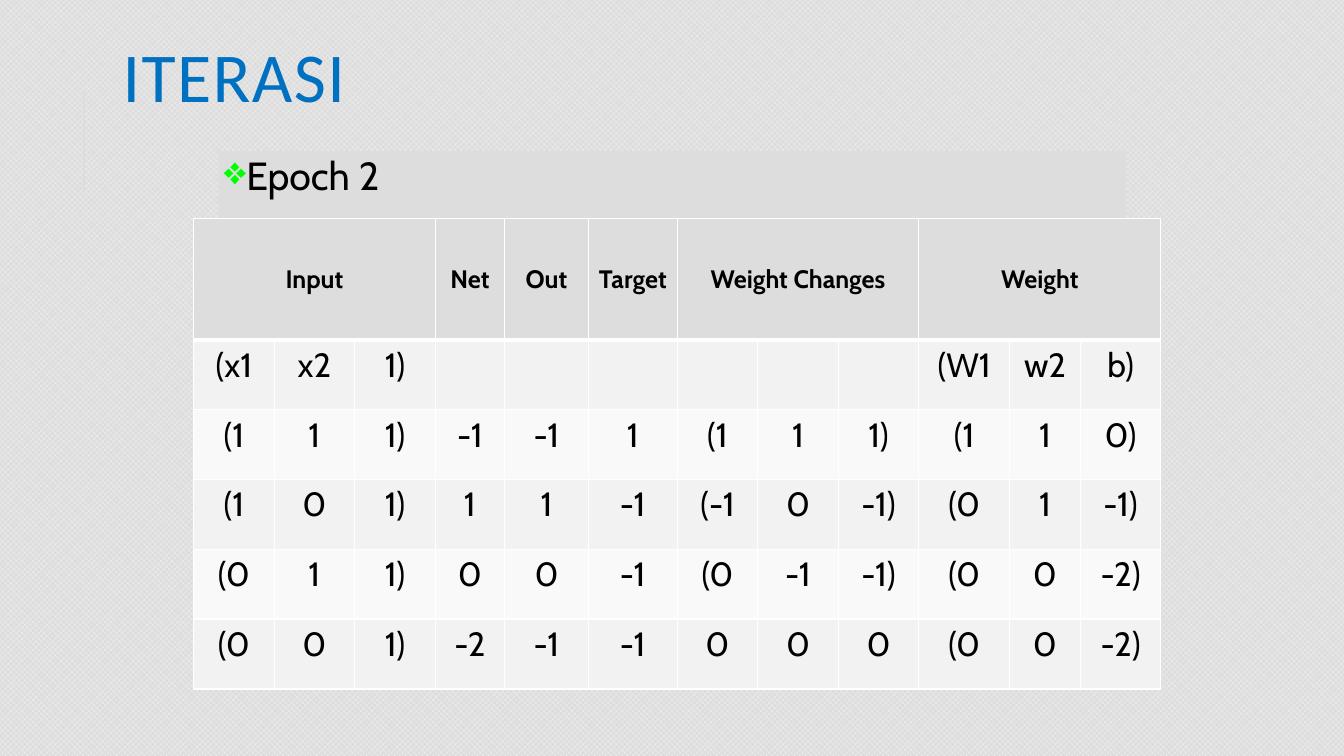
from dataclasses import dataclass

from lxml.etree import SubElement
from pptx import Presentation
from pptx.dml.color import RGBColor
from pptx.enum.dml import MSO_PATTERN
from pptx.enum.shapes import MSO_CONNECTOR, MSO_SHAPE
from pptx.enum.text import MSO_ANCHOR as Anchor, PP_ALIGN as Align
from pptx.oxml.ns import qn
from pptx.util import Cm, Pt


@dataclass(frozen=True)
class Theme:
    title_font: str = "Calibri"
    body_font: str = "Cabin"
    title_size: int = 50
    epoch_size: int = 28
    header_size: int = 18
    value_size: int = 24
    blue: str = "0070C0"
    green: str = "00FF00"
    black: str = "000000"
    white: str = "FFFFFF"
    gray: str = "DDDDDD"
    weave: str = "F8F8F8"
    bands: tuple = ("F2F2F2", "F9F9F9")


COLUMN_WIDTHS = [2.03] * 3 + [1.75, 2.11, 2.24] + [2.03] * 3 + [2.29, 1.78, 2.03]
HEADER_HEIGHT, VALUE_HEIGHT = 3.05, 1.76
# Heading and the number of columns it covers
HEADINGS = [("Input", 3), ("Net", 1), ("Out", 1), ("Target", 1),
            ("Weight Changes", 3), ("Weight", 3)]
ITERATIONS = [
    ["(x1", "x2", "1)", "", "", "", "", "", "", "(W1", "w2", "b)"],
    ["(1", "1", "1)", "-1", "-1", "1", "(1", "1", "1)", "(1", "1", "0)"],
    ["(1", "0", "1)", "1", "1", "-1", "(-1", "0", "-1)", "(0", "1", "-1)"],
    ["(0", "1", "1)", "0", "0", "-1", "(0", "-1", "-1)", "(0", "0", "-2)"],
    ["(0", "0", "1)", "-2", "-1", "-1", "0", "0", "0", "(0", "0", "-2)"],
]


def apply_format(target, values):
    for name, value in values.items():
        setattr(target, name, value)


def rgb(color):
    return RGBColor.from_string(color)


class SlideBuilder:
    def __init__(self, slide, theme):
        self.slide, self.theme = slide, theme

    def background(self):
        fill = self.slide.background.fill
        fill.patterned()
        fill.pattern = MSO_PATTERN.SOLID_DIAMOND
        fill.fore_color.rgb = rgb(self.theme.weave)
        fill.back_color.rgb = rgb(self.theme.gray)

    def add_text(self, paragraph, text, font, size, color, bold=False):
        run = paragraph.add_run()
        run.text = text
        apply_format(run.font, {"name": font, "size": Pt(size), "bold": bold})
        run.font.color.rgb = rgb(color)
        return run

    def rule(self, x, top, bottom):
        line = self.slide.shapes.add_connector(
            MSO_CONNECTOR.STRAIGHT, Cm(x), Cm(bottom), Cm(x), Cm(top))
        line.line.color.rgb = rgb(self.theme.gray)
        line.line.width = Pt(1.5)
        SubElement(line._element.spPr, qn("a:effectLst"))

    def title(self, text, *box):
        frame = self.slide.shapes.add_textbox(*map(Cm, box)).text_frame
        apply_format(frame, {"word_wrap": True, "vertical_anchor": Anchor.MIDDLE})
        paragraph = frame.paragraphs[0]
        paragraph.line_spacing = 0.8
        run = self.add_text(paragraph, text, self.theme.title_font,
                            self.theme.title_size, self.theme.blue)
        run._r.get_or_add_rPr().set("spc", "100")

    def bullet_panel(self, text, *box):
        panel = self.slide.shapes.add_shape(MSO_SHAPE.RECTANGLE, *map(Cm, box))
        panel.shadow.inherit = False
        panel.fill.solid()
        panel.fill.fore_color.rgb = rgb(self.theme.gray)
        panel.line.fill.background()
        frame = panel.text_frame
        apply_format(frame, {"word_wrap": True, "vertical_anchor": Anchor.TOP})
        apply_format(frame, {f"margin_{side}": Cm(0.13)
                             for side in ("left", "top", "right", "bottom")})
        paragraph = frame.paragraphs[0]
        properties = paragraph._p.get_or_add_pPr()
        properties.set("marL", str(Cm(0.25)))
        properties.set("indent", str(Cm(-0.25)))
        bullet_color = SubElement(properties, qn("a:buClr"))
        SubElement(bullet_color, qn("a:srgbClr"), val=self.theme.green)
        SubElement(properties, qn("a:buChar"), char="❖")
        apply_format(paragraph, {"alignment": Align.LEFT, "line_spacing": 0.9,
                                 "space_after": Pt(2)})
        self.add_text(paragraph, text, self.theme.body_font,
                      self.theme.epoch_size, self.theme.black)

    def borders(self, cell, bottom):
        properties = cell._tc.get_or_add_tcPr()
        for side, width in {"L": 1, "R": 1, "T": 1, "B": bottom}.items():
            edge = SubElement(properties, qn(f"a:ln{side}"), w=str(Pt(width)))
            fill = SubElement(edge, qn("a:solidFill"))
            SubElement(fill, qn("a:srgbClr"), val=self.theme.white)

    def cell(self, cell, text, size, fill, header=False):
        self.borders(cell, 3 if header else 1)
        cell.fill.solid()
        cell.fill.fore_color.rgb = rgb(fill)
        cell.vertical_anchor = Anchor.MIDDLE if header else Anchor.TOP
        paragraph = cell.text_frame.paragraphs[0]
        paragraph.alignment = Align.CENTER
        if text:
            self.add_text(paragraph, text, self.theme.body_font, size,
                          self.theme.black, header)

    def iteration_table(self, left, top):
        theme = self.theme
        heights = [HEADER_HEIGHT] + [VALUE_HEIGHT] * len(ITERATIONS)
        table = self.slide.shapes.add_table(
            len(heights), len(COLUMN_WIDTHS), Cm(left), Cm(top),
            Cm(sum(COLUMN_WIDTHS)), Cm(sum(heights))).table
        for column, width in zip(table.columns, COLUMN_WIDTHS):
            column.width = Cm(width)
        for row, height in zip(table.rows, heights):
            row.height = Cm(height)

        start = 0
        for heading, span in HEADINGS:
            for offset in range(span):
                self.cell(table.cell(0, start + offset), "" if offset else heading,
                          theme.header_size, theme.gray, header=True)
            if span > 1:
                table.cell(0, start).merge(table.cell(0, start + span - 1))
            start += span

        for index, values in enumerate(ITERATIONS):
            for column, value in enumerate(values):
                self.cell(table.cell(index + 1, column), value,
                          theme.value_size, theme.bands[index % 2])


def main():
    deck = Presentation()
    apply_format(deck, {"slide_width": Cm(33.87), "slide_height": Cm(19.05)})
    builder = SlideBuilder(deck.slides.add_slide(deck.slide_layouts[6]), Theme())
    builder.background()
    builder.rule(2.11, 2.29, 4.83)
    builder.title("ITERASI", 2.84, 0, 27, 4.17)
    builder.bullet_panel("Epoch 2", 5.51, 3.81, 22.86, 13.21)
    builder.iteration_table(4.88, 5.51)
    deck.save("out.pptx")


if __name__ == "__main__":
    main()
